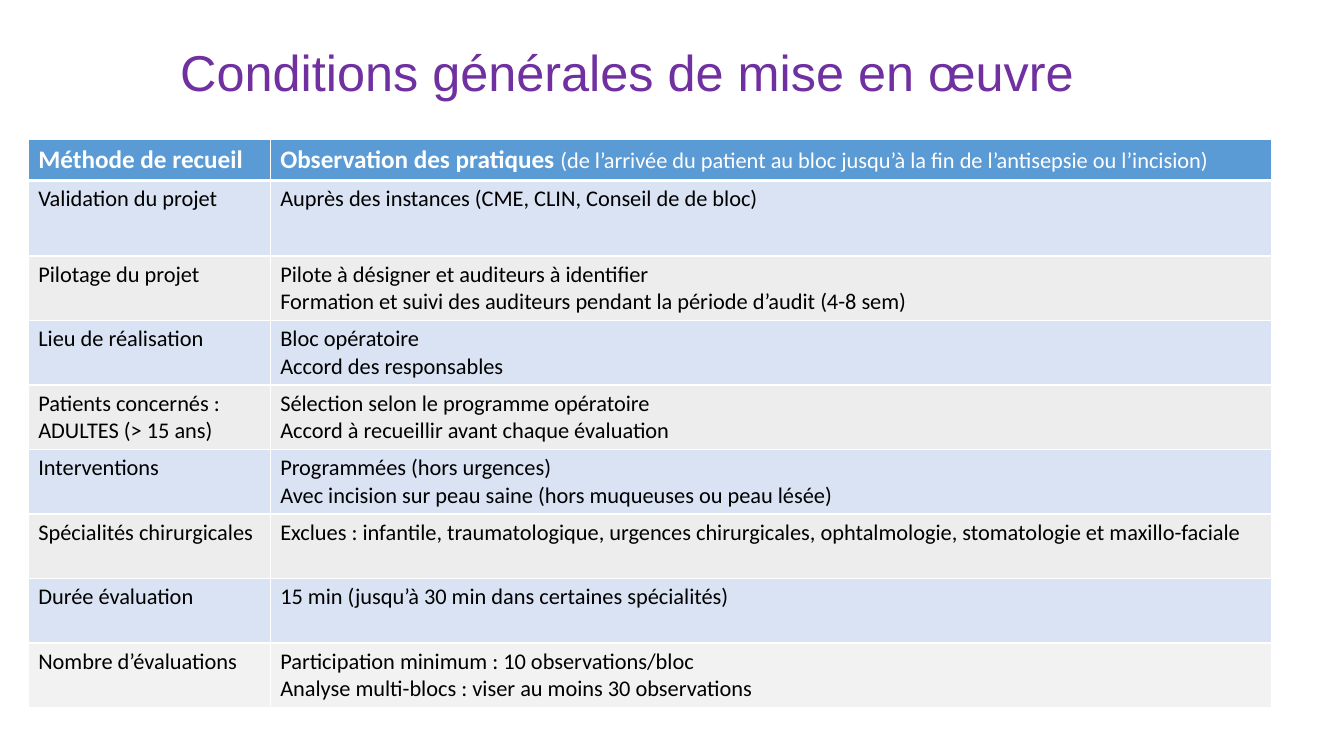
from lxml.etree import SubElement
from pptx import Presentation
from pptx.dml.color import RGBColor
from pptx.enum.text import MSO_ANCHOR, PP_ALIGN
from pptx.oxml.ns import qn
from pptx.util import Inches, Pt

COLORS = {
    "title": "7030A0",
    "header": "5B9BD5",
    "blue band": "DAE3F3",
    "grey band": "EDEDED",
    "last band": "F2F2F2",
    "text": "000000",
    "white": "FFFFFF",
}
TITLE = "Conditions générales de mise en œuvre "  # the final space counts in centring
HEADER_METHOD = "Méthode de recueil"
HEADER_PRACTICE = "Observation des pratiques "
HEADER_SCOPE = "(de l’arrivée du patient au bloc jusqu’à la fin de l’antisepsie ou l’incision)"
CONDITIONS = [
    (["Validation du projet"],
     ["Auprès des instances (CME, CLIN, Conseil de de bloc)"]),
    (["Pilotage du projet"],
     ["Pilote à désigner et auditeurs à identifier",
      "Formation et suivi des auditeurs pendant la période d’audit (4-8 sem)"]),
    (["Lieu de réalisation"],
     ["Bloc opératoire", "Accord des responsables"]),
    (["Patients concernés :", "ADULTES (> 15 ans)"],
     ["Sélection selon le programme opératoire",
      "Accord à recueillir avant chaque évaluation"]),
    (["Interventions"],
     ["Programmées (hors urgences)",
      "Avec incision sur peau saine (hors muqueuses ou peau lésée)"]),
    (["Spécialités chirurgicales"],
     ["Exclues : infantile, traumatologique, urgences chirurgicales, "
      "ophtalmologie, stomatologie et maxillo-faciale"]),
    (["Durée évaluation"],
     ["15 min (jusqu’à 30 min dans certaines spécialités)"]),
    (["Nombre d’évaluations"],
     ["Participation minimum : 10 observations/bloc",
      "Analyse multi-blocs : viser au moins 30 observations"]),
]
COLUMN_WIDTHS = [2.4, 9.93]
ROW_HEIGHTS = [0.41, 0.75] + [0.64] * (len(CONDITIONS) - 1)


def add_run(paragraph, text, size, color, bold=False, font="Calibri"):
    run = paragraph.add_run()
    run.text = text
    run.font.name = font
    run.font.size = Pt(size)
    run.font.bold = bold
    run.font.color.rgb = RGBColor.from_string(COLORS[color])


def add_border(cell, side, points):
    line = SubElement(cell._tc.get_or_add_tcPr(), qn(f"a:ln{side}"), w=str(Pt(points)))
    SubElement(SubElement(line, qn("a:solidFill")), qn("a:srgbClr"), val=COLORS["white"])


def style_cell(cell, fill, top=1, bottom=1):
    """Borders go in before the fill, as the schema orders them."""
    for side, points in (("L", 1), ("R", 1), ("T", top), ("B", bottom)):
        add_border(cell, side, points)
    cell.fill.solid()
    cell.fill.fore_color.rgb = RGBColor.from_string(COLORS[fill])


def add_title(slide):
    frame = slide.shapes.add_textbox(
        Inches(0.54), Inches(0.28), Inches(11.5), Inches(0.93)).text_frame
    frame.word_wrap = True
    frame.vertical_anchor = MSO_ANCHOR.MIDDLE
    heading = frame.paragraphs[0]
    heading.alignment = PP_ALIGN.CENTER
    heading.line_spacing = 0.9
    add_run(heading, TITLE, 36, "title", font="Arial")


def add_conditions(slide):
    table = slide.shapes.add_table(
        len(ROW_HEIGHTS), len(COLUMN_WIDTHS), Inches(0.28), Inches(1.38),
        Inches(sum(COLUMN_WIDTHS)), Inches(sum(ROW_HEIGHTS))).table
    for column, width in zip(table.columns, COLUMN_WIDTHS):
        column.width = Inches(width)
    for row, height in zip(table.rows, ROW_HEIGHTS):
        row.height = Inches(height)

    for column, label in enumerate((HEADER_METHOD, HEADER_PRACTICE)):
        cell = table.cell(0, column)
        style_cell(cell, "header", bottom=3)
        add_run(cell.text_frame.paragraphs[0], label, 18, "white", bold=True)
    add_run(table.cell(0, 1).text_frame.paragraphs[0], HEADER_SCOPE, 16, "white")

    for number, condition in enumerate(CONDITIONS, start=1):
        band = "blue band" if number % 2 else "grey band"
        if number == len(CONDITIONS):
            band = "last band"
        for column, lines in enumerate(condition):
            cell = table.cell(number, column)
            style_cell(cell, band, top=3 if number == 1 else 1)
            frame = cell.text_frame
            for index, line in enumerate(lines):
                paragraph = frame.add_paragraph() if index else frame.paragraphs[0]
                add_run(paragraph, line, 16, "text")


def main():
    deck = Presentation()
    deck.slide_width, deck.slide_height = Inches(13.33), Inches(7.5)
    slide = deck.slides.add_slide(deck.slide_layouts[6])
    add_title(slide)
    add_conditions(slide)
    deck.save("out.pptx")


if __name__ == "__main__":
    main()
